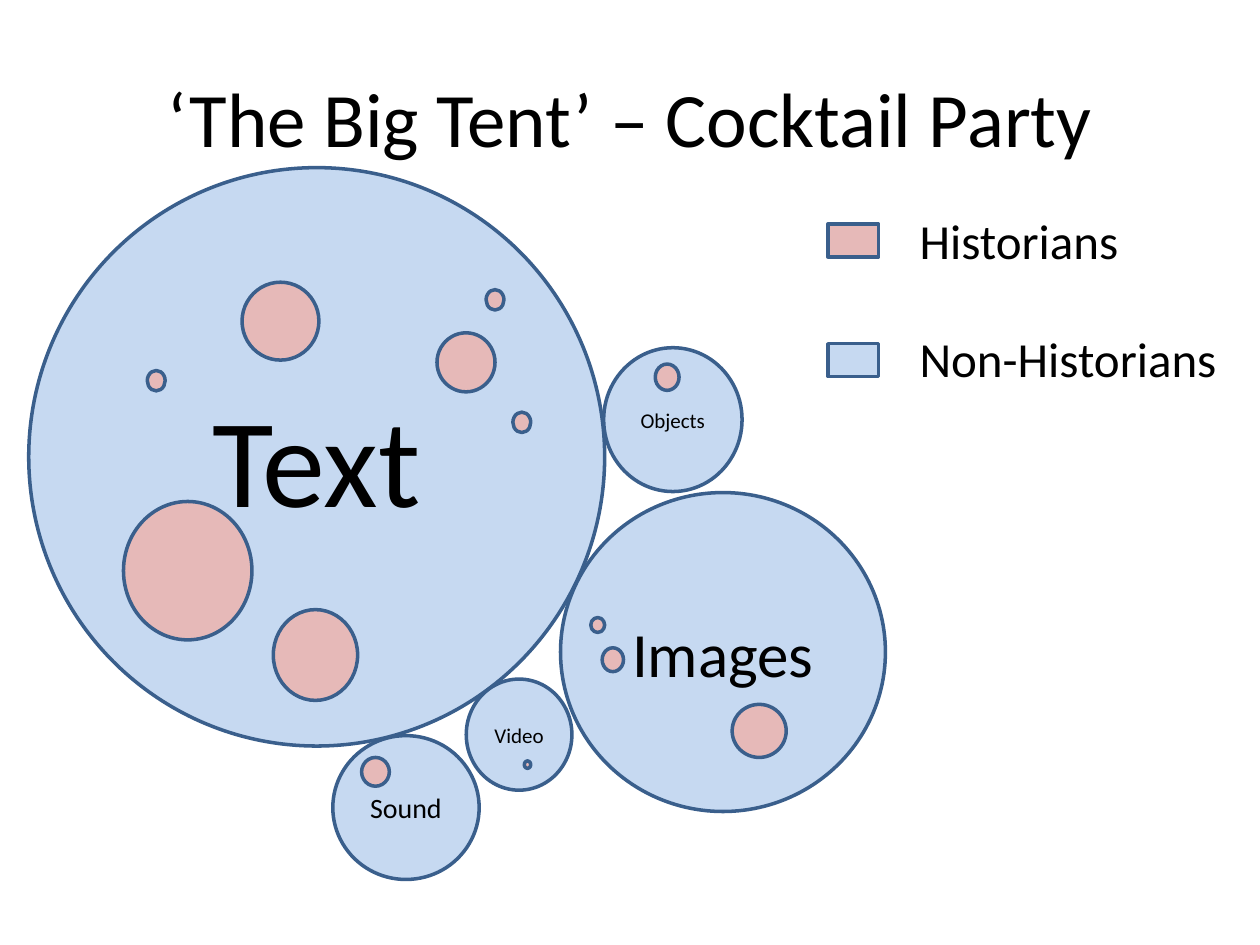
"""Builds the 'Big Tent' slide: media bubbles holding clusters of historians."""
import pptx
import pptx.dml.color
import pptx.enum.shapes
import pptx.enum.text
import pptx.util

Cm, Pt = pptx.util.Cm, pptx.util.Pt
SHAPE = pptx.enum.shapes.MSO_SHAPE
ALIGN = pptx.enum.text.PP_ALIGN
MIDDLE = pptx.enum.text.MSO_ANCHOR.MIDDLE

BUBBLES = [
    ("Sound", 16, (6.71, 14.83, 2.95, 2.9), [(7.29, 15.27, 0.56, 0.58)]),
    ("Text", 72, (0.58, 3.38, 11.61, 11.66), [
        (4.88, 5.69, 1.55, 1.57),
        (8.81, 6.71, 1.17, 1.19),
        (5.51, 12.29, 1.7, 1.83),
        (9.8, 5.84, 0.36, 0.41),
        (10.34, 8.31, 0.36, 0.41),
        (2.49, 10.11, 2.59, 2.79),
        (2.97, 7.47, 0.36, 0.41),
    ]),
    ("Images", 36, (11.3, 9.93, 6.55, 6.43), [(14.76, 14.2, 1.09, 1.07)]),
    ("Video", 12, (9.4, 13.69, 2.13, 2.24), [(10.57, 15.34, 0.13, 0.15)]),
    ("Objects", 12, (12.17, 7.01, 2.79, 2.9), [(13.21, 7.34, 0.48, 0.53)]),
]
IMAGE_HISTORIANS = [(11.91, 12.45, 0.28, 0.3), (12.14, 13.06, 0.43, 0.48)]


def color(value):
    return pptx.dml.color.RGBColor.from_string(value)


class Slide:
    font = "Calibri"
    ink = "000000"
    outline = "3A5F8C"
    historians = "E6B9B8"
    others = "C6D9F1"

    def __init__(self, deck):
        self.slide = deck.slides.add_slide(deck.slide_layouts[6])

    def set_text(self, frame, text, size, align, wrap):
        frame.text = text
        frame.word_wrap = wrap
        for paragraph in frame.paragraphs:
            paragraph.alignment = align
            for run in paragraph.runs:
                run.font.name = self.font
                run.font.size = Pt(size)
                run.font.color.rgb = color(self.ink)

    def textbox(self, box, text, size, align=ALIGN.LEFT, wrap=False):
        frame = self.slide.shapes.add_textbox(*map(Cm, box)).text_frame
        self.set_text(frame, text, size, align, wrap)
        return frame

    def shape(self, box, fill, kind=SHAPE.OVAL, parent=None):
        shapes = (parent or self.slide).shapes
        figure = shapes.add_shape(kind, *map(Cm, box))
        figure.shadow.inherit = False
        figure.fill.solid()
        figure.fill.fore_color.rgb = color(fill)
        figure.line.color.rgb = color(self.outline)
        figure.line.width = Pt(2)
        return figure

    def bubble(self, name, size, box, clusters):
        group = self.slide.shapes.add_group_shape()
        medium = self.shape(box, self.others, parent=group)
        medium.text_frame.vertical_anchor = MIDDLE
        self.set_text(medium.text_frame, name, size, ALIGN.CENTER, False)
        for cluster in clusters:
            self.shape(cluster, self.historians, parent=group)

    def legend(self):
        labels = self.textbox((18.29, 4.11, 6.55, 3.84), "Historians\nNon-Historians", 28)
        labels.paragraphs[1].space_before = Pt(34)
        for row, fill in enumerate((self.historians, self.others)):
            self.shape((16.69, 4.52 + 2.41 * row, 1.02, 0.66), fill, SHAPE.RECTANGLE)


def main():
    deck = pptx.Presentation()
    deck.slide_width, deck.slide_height = Cm(25.4), Cm(19.05)
    party = Slide(deck)
    title = party.textbox((1.27, 0.76, 22.86, 3.18), "‘The Big Tent’ – Cocktail Party",
                          44, ALIGN.CENTER, True)
    title.vertical_anchor = MIDDLE
    party.legend()
    for bubble in BUBBLES:
        party.bubble(*bubble)
    for cluster in IMAGE_HISTORIANS:
        party.shape(cluster, party.historians)
    deck.save("out.pptx")


if __name__ == "__main__":
    main()
